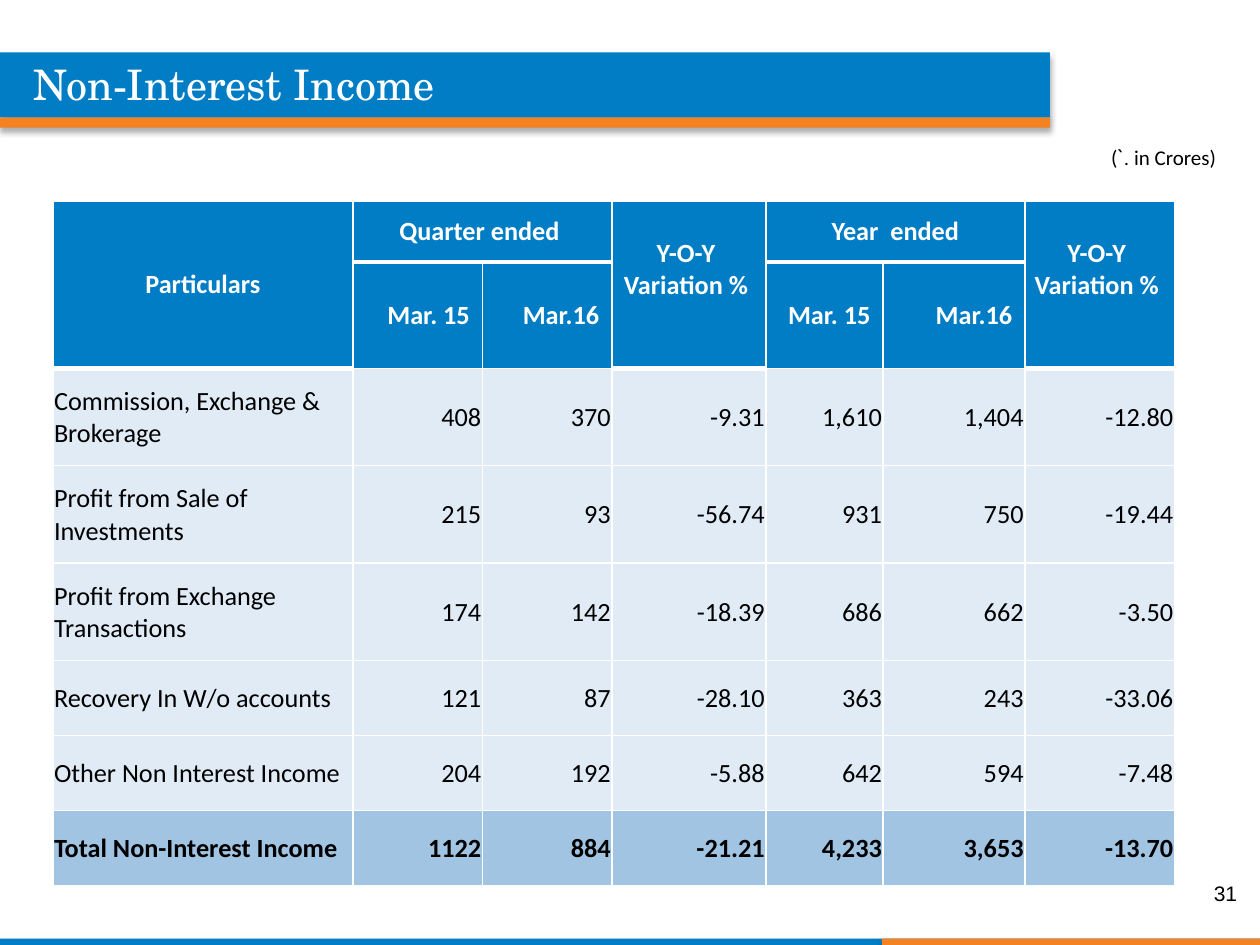
import pptx
import pptx.dml.color
import pptx.enum.shapes
import pptx.enum.text
import pptx.oxml
import pptx.oxml.ns
import pptx.util
from lxml import etree

Pt = pptx.util.Pt
ALIGN = pptx.enum.text.PP_ALIGN
MIDDLE = pptx.enum.text.MSO_ANCHOR.MIDDLE

COLORS = {"blue": "007DC5", "orange": "F58220", "white": "FFFFFF",
          "black": "000000", "pale": "E0EBF6", "total": "A1C4E3"}

# left, top, width, height, colour
BARS = [
    (0, 536.4, 720, 3.6, "blue"),
    (504, 536.4, 216, 3.6, "orange"),
    (0, 30, 600, 37.2, "blue"),
    (0, 67.2, 600, 5.8, "orange"),
]
# box, alignment, size, colour, runs of (text, font)
CAPTIONS = [
    ((606, 79.2, 96, 21.6), ALIGN.RIGHT, 12, "black",
     [("(", "Calibri"), ("`.", "Roboto"), (" in Crores)", "Calibri")]),
    ((12, 30, 486, 36), ALIGN.LEFT, 24, "white",
     [("Non-Interest Income", "TeX Gyre Schola")]),
    ((546, 496, 168, 28.8), ALIGN.RIGHT, 12, "black", [("31", "Arial")]),
]

VARIATION = ["Y-O-Y ", "Variation % "]
# row, column, rows spanned, columns spanned, lines
HEADINGS = [
    (0, 0, 2, 1, ["Particulars"]),
    (0, 1, 1, 2, ["Quarter ended "]),
    (0, 3, 2, 1, VARIATION),
    (0, 4, 1, 2, ["Year  ended"]),
    (0, 6, 2, 1, VARIATION),
]
PERIODS = {1: "Mar. 15", 2: "Mar.16", 4: "Mar. 15", 5: "Mar.16"}
INCOME = [
    ("Commission, Exchange & Brokerage", "408", "370", "-9.31", "1,610", "1,404", "-12.80"),
    ("Profit from Sale of Investments", "215", "93", "-56.74", "931", "750", "-19.44"),
    ("Profit from Exchange Transactions", "174", "142", "-18.39", "686", "662", "-3.50"),
    ("Recovery In W/o accounts", "121", "87", "-28.10", "363", "243", "-33.06"),
    ("Other Non Interest Income", "204", "192", "-5.88", "642", "594", "-7.48"),
    ("Total Non-Interest Income", "1122", "884", "-21.21", "4,233", "3,653", "-13.70"),
]
COLUMN_WIDTHS = [171.5, 74, 74, 88, 67, 81, 85.5]
ROW_HEIGHTS = [34.6, 60.8, 55.6, 55.6, 55.6, 43, 43, 43]
TABLE_LEFT, TABLE_TOP = 30.2, 115.2
HEADER_INSETS = (7.2, 3.6, 7.2, 3.6)
VARIATION_INSETS = (0.7, 0.7, 0.7, 18)  # lifts the heading above the middle
BODY_INSETS = (0.7, 0.7, 0.7, 0)


def rgb(color):
    return pptx.dml.color.RGBColor.from_string(COLORS[color])


def add_run(paragraph, text, font, size, color, bold=False):
    run = paragraph.add_run()
    run.text = text
    run.font.name = font
    run.font.size = Pt(size)
    run.font.bold = bold
    run.font.color.rgb = rgb(color)


def add_bar(slide, left, top, width, height, color):
    bar = slide.shapes.add_shape(pptx.enum.shapes.MSO_SHAPE.RECTANGLE,
                                 Pt(left), Pt(top), Pt(width), Pt(height))
    bar.fill.solid()
    bar.fill.fore_color.rgb = rgb(color)
    bar.line.fill.background()
    bar.shadow.inherit = False
    effects = bar.element.spPr.find(pptx.oxml.ns.qn("a:effectLst"))
    effects.append(pptx.oxml.parse_xml(
        f'<a:outerShdw {pptx.oxml.ns.nsdecls("a")} blurRad="{Pt(3.5)}" '
        f'dist="{Pt(2.2)}" dir="5400000" algn="t" rotWithShape="0">'
        f'<a:srgbClr val="{COLORS["black"]}"><a:alpha val="32000"/></a:srgbClr>'
        '</a:outerShdw>'))


def add_caption(slide, box, alignment, size, color, runs):
    frame = slide.shapes.add_textbox(*map(Pt, box)).text_frame
    frame.word_wrap = True
    frame.vertical_anchor = MIDDLE
    frame.paragraphs[0].alignment = alignment
    for text, font in runs:
        add_run(frame.paragraphs[0], text, font, size, color)


def style_cell(cell, fill, borders):
    """Fill a cell and give it white borders, as pairs of tag and points."""
    cell.fill.solid()
    cell.fill.fore_color.rgb = rgb(fill)
    properties = cell._tc.get_or_add_tcPr()
    for position, (tag, points) in enumerate(borders):
        line = etree.Element(pptx.oxml.ns.qn(f"a:{tag}"), w=str(Pt(points)))
        solid = etree.SubElement(line, pptx.oxml.ns.qn("a:solidFill"))
        etree.SubElement(solid, pptx.oxml.ns.qn("a:srgbClr"), val=COLORS["white"])
        properties.insert(position, line)


def write_cell(cell, lines, alignment, insets, color, bold):
    cell.vertical_anchor = MIDDLE
    (cell.margin_left, cell.margin_top,
     cell.margin_right, cell.margin_bottom) = map(Pt, insets)
    frame = cell.text_frame
    for index, line in enumerate(lines):
        paragraph = frame.add_paragraph() if index else frame.paragraphs[0]
        paragraph.alignment = alignment
        add_run(paragraph, line, "Calibri", 15, color, bold)


def add_income_table(slide):
    table = slide.shapes.add_table(
        len(ROW_HEIGHTS), len(COLUMN_WIDTHS), Pt(TABLE_LEFT), Pt(TABLE_TOP),
        Pt(sum(COLUMN_WIDTHS)), Pt(sum(ROW_HEIGHTS))).table
    for column, width in zip(table.columns, COLUMN_WIDTHS):
        column.width = Pt(width)
    for row, height in zip(table.rows, ROW_HEIGHTS):
        row.height = Pt(height)

    last_row = len(ROW_HEIGHTS) - 1
    for r in range(len(ROW_HEIGHTS)):
        fill = "blue" if r < 2 else "total" if r == last_row else "pale"
        for c in range(len(COLUMN_WIDTHS)):
            thick = r == 0 or (r == 1 and c not in PERIODS)
            borders = [("lnL", 1), ("lnR", 1)]
            if r == 0:
                borders.append(("lnT", 1))
            borders.append(("lnB", 3 if thick else 1))
            style_cell(table.cell(r, c), fill, borders)

    for r, c, row_span, column_span, lines in HEADINGS:
        cell = table.cell(r, c)
        cell.merge(table.cell(r + row_span - 1, c + column_span - 1))
        insets = VARIATION_INSETS if lines is VARIATION else HEADER_INSETS
        write_cell(cell, lines, ALIGN.CENTER, insets, "white", True)
    for c, period in PERIODS.items():
        write_cell(table.cell(1, c), [period], ALIGN.RIGHT, HEADER_INSETS, "white", True)
    for r, values in enumerate(INCOME, start=2):
        for c, value in enumerate(values):
            write_cell(table.cell(r, c), [value], ALIGN.RIGHT if c else ALIGN.LEFT,
                       BODY_INSETS, "black", r == last_row)


def main():
    presentation = pptx.Presentation()
    presentation.slide_width, presentation.slide_height = Pt(720), Pt(540)
    slide = presentation.slides.add_slide(presentation.slide_layouts[6])
    for bar in BARS:
        add_bar(slide, *bar)
    for caption in CAPTIONS:
        add_caption(slide, *caption)
    add_income_table(slide)
    presentation.save("out.pptx")


if __name__ == "__main__":
    main()
